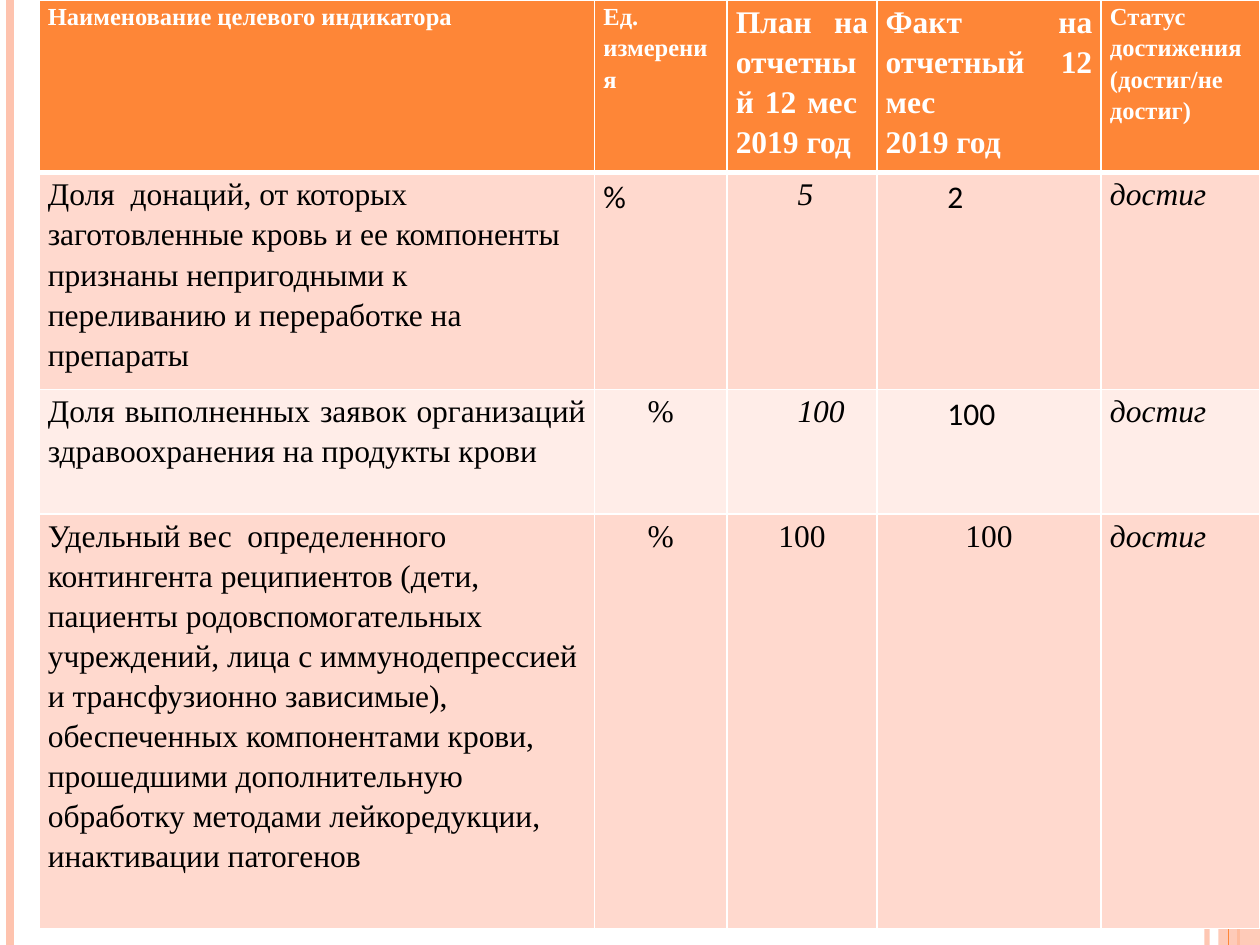
import pptx
import pptx.util
import pptx.dml.color
import pptx.enum.shapes
import pptx.enum.text
from lxml import etree
from pptx.oxml import parse_xml
from pptx.oxml.ns import qn
from pptx.util import Inches, Pt

ALIGN = pptx.enum.text.PP_ALIGN
LEFT, CENTER, JUSTIFY = ALIGN.LEFT, ALIGN.CENTER, ALIGN.JUSTIFY
NS = "http://schemas.openxmlformats.org/drawingml/2006/main"
SERIF, SANS = "Times New Roman", "Calibri"
ORANGE, PEACH, WHITE, BLACK = "FE8637", "FEC3AE", "FFFFFF", "000000"
BANDS = ["FFD9CE", "FFEDE8"]


def rgb(color):
    return pptx.dml.color.RGBColor.from_string(color)


def set_alpha(element, percent):
    """Make the first solid colour inside element partly transparent."""
    clr = next(element.iter(qn("a:srgbClr")))
    etree.SubElement(clr, qn("a:alpha")).set("val", str(percent * 1000))


class SlideBuilder:
    def __init__(self, s):
        self.s = s
        self.line_spacing = 1.15
        self.inset = Inches(0.07)

    def vertical_line(self, x, color, width, alpha=100):
        line = self.s.shapes.add_connector(
            pptx.enum.shapes.MSO_CONNECTOR.STRAIGHT,
            Inches(x), 0, Inches(x), Inches(7.5))
        line.line.color.rgb = rgb(color)
        line.line.width = Pt(width)
        if alpha < 100:
            set_alpha(line.line._get_or_add_ln(), alpha)
        etree.SubElement(line._element.spPr, qn("a:effectLst"))

    def rectangle(self, x, y, w, h, color, alpha):
        sp = self.s.shapes.add_shape(
            pptx.enum.shapes.MSO_SHAPE.RECTANGLE,
            Inches(x), Inches(y), Inches(w), Inches(h))
        sp.shadow.inherit = False
        sp.fill.solid()
        sp.fill.fore_color.rgb = rgb(color)
        set_alpha(sp._element.spPr, alpha)
        sp.line.fill.background()

    def table(self, x, y, cols, rows):
        tbl = self.s.shapes.add_table(
            len(rows), len(cols), Inches(x), Inches(y),
            Inches(sum(cols)), Inches(sum(rows))).table
        for column, width in zip(tbl.columns, cols):
            column.width = Inches(width)
        for row, height in zip(tbl.rows, rows):
            row.height = Inches(height)
        return tbl

    def cell(self, cell, text, fill, color=BLACK, size=18, align=JUSTIFY,
             font=SERIF, bold=False, italic=False, indent=0, top=1, bottom=1):
        cell.margin_left = cell.margin_right = self.inset
        cell.margin_top = cell.margin_bottom = 0
        cell.fill.solid()
        cell.fill.fore_color.rgb = rgb(fill)
        self.borders(cell, top, bottom)
        tf = cell.text_frame
        tf.text = text
        for p in tf.paragraphs:
            p.alignment = align
            p.line_spacing = self.line_spacing
            p.font.name, p.font.size = font, Pt(size)
            p.font.bold, p.font.italic = bold, italic
            p.font.color.rgb = rgb(color)
            if indent:
                p._p.get_or_add_pPr().set("indent", str(Inches(indent)))

    def borders(self, cell, top, bottom):
        tc_pr = cell._tc.get_or_add_tcPr()
        widths = {"lnL": 1, "lnR": 1, "lnT": top, "lnB": bottom}
        for i, (tag, width) in enumerate(widths.items()):
            tc_pr.insert(i, parse_xml(
                f'<a:{tag} xmlns:a="{NS}" w="{Pt(width)}"><a:solidFill>'
                f'<a:srgbClr val="{WHITE}"/></a:solidFill></a:{tag}>'))


HEADERS = [
    ("Наименование целевого индикатора", 14),
    ("Ед. измерения", 14),
    ("План на отчетный 12 мес  2019 год", 18),
    ("Факт на отчетный 12 мес\n2019 год", 18),
    ("Статус достижения (достиг/не достиг)", 14),
]
CENTERED = {"align": CENTER}
INDENTED = {"indent": 0.49}
PLAN = {"indent": 0.49, "italic": True}
STATUS = ("достиг", {"italic": True})
INDICATORS = [
    [("Доля  донаций, от которых заготовленные кровь и ее компоненты "
      "признаны непригодными к переливанию и переработке на препараты",
      {"align": LEFT}),
     ("%", {"align": LEFT, "font": SANS}),
     ("5", PLAN), ("2", {**INDENTED, "font": SANS}), STATUS],
    [("Доля выполненных заявок организаций здравоохранения на продукты крови",
      {}),
     ("%", CENTERED), ("100", PLAN),
     ("100", {**INDENTED, "font": SANS, "align": LEFT}), STATUS],
    [("Удельный вес  определенного контингента реципиентов (дети, пациенты "
      "родовспомогательных учреждений, лица с иммунодепрессией и "
      "трансфузионно зависимые), обеспеченных компонентами крови, "
      "прошедшими дополнительную обработку методами лейкоредукции, "
      "инактивации патогенов", {"align": LEFT}),
     ("%", CENTERED), ("100", CENTERED), ("100", CENTERED), STATUS],
]


def main():
    prs = pptx.Presentation()
    prs.slide_width, prs.slide_height = Inches(10), Inches(7.5)
    b = SlideBuilder(prs.slides.add_slide(prs.slide_layouts[6]))

    b.vertical_line(9.58, PEACH, 3, alpha=93)
    b.vertical_line(0.08, PEACH, 4.5)
    b.vertical_line(9.83, ORANGE, 1.5)
    b.rectangle(9.67, 0, 0.33, 7.5, PEACH, alpha=87)
    b.vertical_line(9.75, ORANGE, 0.75)

    tbl = b.table(0.31, 0, cols=[4.41, 1.05, 1.19, 1.78, 1.26],
                  rows=[1.37, 1.72, 0.99, 3.29])
    for col, (text, size) in enumerate(HEADERS):
        b.cell(tbl.cell(0, col), text, ORANGE, WHITE, size, bold=True, bottom=3)
    for row, indicator in enumerate(INDICATORS, start=1):
        for col, (text, style) in enumerate(indicator):
            b.cell(tbl.cell(row, col), text, BANDS[(row - 1) % 2],
                   top=3 if row == 1 else 1, **style)
    prs.save("out.pptx")


if __name__ == "__main__":
    main()
